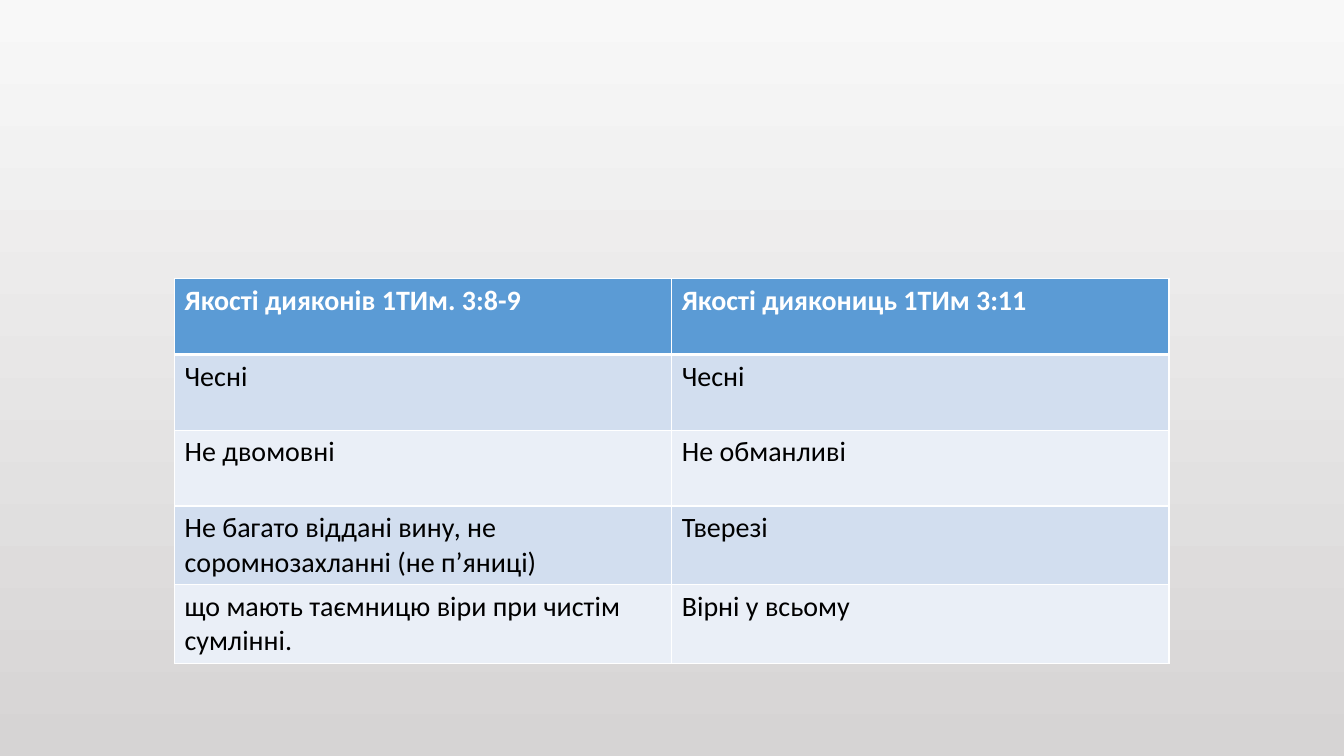
from lxml import etree
from pptx import Presentation
from pptx.dml.color import RGBColor
from pptx.oxml.ns import qn
from pptx.util import Cm, Pt

COLORS = {
    "bg_top": "F8F8F8",
    "bg_bottom": "D6D4D4",
    "header": "5B9BD5",
    "band_dark": "D2DEEF",
    "band_light": "EAEFF7",
    "white": "FFFFFF",
    "black": "000000",
}
QUALITIES = [
    ("Якості дияконів 1ТИм. 3:8-9", "Якості диякониць 1ТИм 3:11"),
    ("Чесні", "Чесні"),
    ("Не двомовні", "Не обманливі"),
    ("Не багато віддані вину, не соромнозахланні (не п’яниці)", "Тверезі"),
    ("що мають таємницю віри при чистім сумлінні.", "Вірні у всьому"),
]
COLUMN_WIDTH = Cm(12.53)
ROW_HEIGHT = Cm(1.91)


def rgb(name):
    return RGBColor.from_string(COLORS[name])


def add_border(cell, side, width):
    line = etree.SubElement(cell._tc.get_or_add_tcPr(), qn(f"a:ln{side}"), w=str(Pt(width)))
    fill = etree.SubElement(line, qn("a:solidFill"))
    etree.SubElement(fill, qn("a:srgbClr"), val=COLORS["white"])


prs = Presentation()
prs.slide_width = Cm(33.87)
prs.slide_height = Cm(19.05)
slide = prs.slides.add_slide(prs.slide_layouts[6])

backdrop = slide.background.fill
backdrop.gradient()
backdrop.gradient_angle = 270
for stop, name in zip(backdrop.gradient_stops, ("bg_top", "bg_bottom")):
    stop.color.rgb = rgb(name)

comparison = slide.shapes.add_table(
    len(QUALITIES), 2, Cm(4.4), Cm(7.02), COLUMN_WIDTH * 2, ROW_HEIGHT * len(QUALITIES)
).table
for column in comparison.columns:
    column.width = COLUMN_WIDTH

for row_index, row_texts in enumerate(QUALITIES):
    is_header = row_index == 0
    comparison.rows[row_index].height = ROW_HEIGHT
    band = "header" if is_header else "band_dark" if row_index % 2 else "band_light"
    for column_index, text in enumerate(row_texts):
        cell = comparison.cell(row_index, column_index)
        for side in "LRTB":
            thick = (is_header and side == "B") or (row_index == 1 and side == "T")
            add_border(cell, side, 3 if thick else 1)
        cell.fill.solid()
        cell.fill.fore_color.rgb = rgb(band)
        cell.text_frame.text = text
        font = cell.text_frame.paragraphs[0].runs[0].font
        font.name = "Calibri"
        font.size = Pt(20)
        font.bold = is_header
        font.color.rgb = rgb("white" if is_header else "black")

prs.save("out.pptx")
